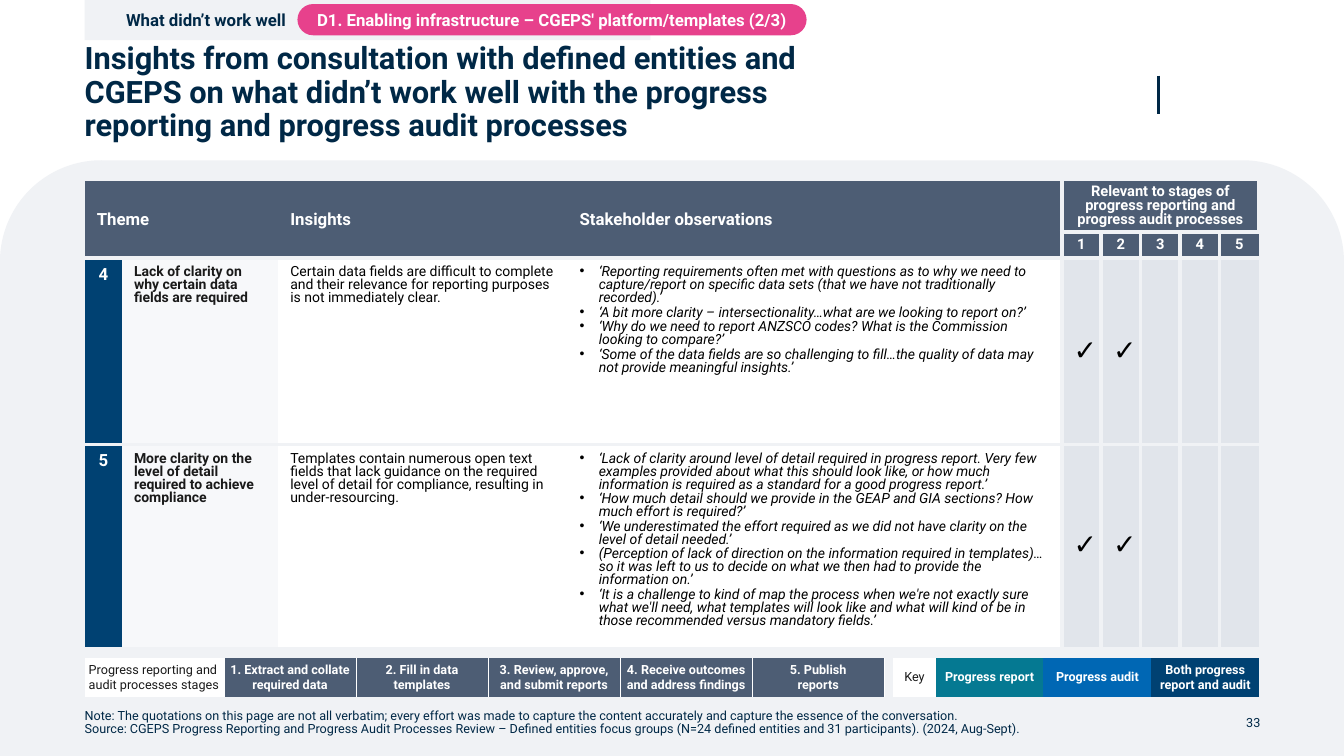
from lxml import etree
from pptx import Presentation, util as u
from pptx.dml.color import RGBColor
from pptx.enum import shapes, text
from pptx.oxml.ns import qn

THEME = dict(
    font="Roboto", navy="002846", white="FFFFFF", ink="1A1A1A", black="000000",
    panel="F0F2F5", slate="4D5D74", blue="004172", mid_blue="0067B4", teal="057992",
    pink="E7418C", theme_cell="F7F8FA", stage_cell="E1E5EB",
    title=22, tick=20, heading=12, stage=10.5, body=10, small=9,
)
CENTER, RIGHT = text.PP_ALIGN.CENTER, text.PP_ALIGN.RIGHT
MIDDLE, TOP = text.MSO_ANCHOR.MIDDLE, text.MSO_ANCHOR.TOP


def write(frame, lines, size, color, bold=False, italic=False, bullet=False, **layout):
    for number, line in enumerate(lines):
        paragraph = frame.paragraphs[0] if number == 0 else frame.add_paragraph()
        paragraph.text = line
        if bullet:
            properties = paragraph._p.get_or_add_pPr()
            properties.set("marL", str(u.Inches(0.19)))
            properties.set("indent", str(-u.Inches(0.19)))
            etree.SubElement(properties, qn("a:buFont"), typeface="Arial")
            etree.SubElement(properties, qn("a:buChar"), char="•")
            if number:
                paragraph.space_before = u.Pt(1)
        for name, value in layout.items():
            setattr(paragraph, name, value)
        for run in paragraph.runs:
            font = dict(name=THEME["font"], size=u.Pt(THEME[size]), bold=bold, italic=italic)
            for name, value in font.items():
                setattr(run.font, name, value)
            run.font.color.rgb = RGBColor.from_string(THEME[color])


def style_cell(cell, fill, margins, anchor, edges="", edge_color="panel", edge_width=3):
    across, down = margins
    places = dict(margin_left=u.Inches(across), margin_right=u.Inches(across),
                  margin_top=u.Inches(down), margin_bottom=u.Inches(down), vertical_anchor=anchor)
    for name, value in places.items():
        setattr(cell, name, value)
    properties = cell._tc.get_or_add_tcPr()
    for side in "LRTB":
        edge = etree.SubElement(properties, qn(f"a:ln{side}"))
        if side in edges:
            edge.set("w", str(u.Pt(edge_width)))
            solid = etree.SubElement(edge, qn("a:solidFill"))
            etree.SubElement(solid, qn("a:srgbClr"), val=THEME[edge_color])
        else:
            edge.set("w", "0")
            etree.SubElement(edge, qn("a:noFill"))
    cell.fill.solid()
    cell.fill.fore_color.rgb = RGBColor.from_string(THEME[fill])


deck = Presentation()
deck.slide_width, deck.slide_height = u.Inches(13.33), u.Inches(7.5)
slide = deck.slides.add_slide(deck.slide_layouts[6])

preset = shapes.MSO_SHAPE
blocks = [
    (preset.ROUND_2_SAME_RECTANGLE, (0, 1.59, 13.33, 5.91), "panel", 0.17, 0.1, None),
    (preset.RECTANGLE, (0.84, 0, 5.61, 0.4), "panel", None, 0.41,
     dict(lines=["What didn’t work well"], color="navy", alignment=text.PP_ALIGN.LEFT)),
    (preset.ROUNDED_RECTANGLE, (2.95, 0.04, 5.05, 0.31), "pink", 0.5, 0.1,
     dict(lines=["D1. Enabling infrastructure – CGEPS' platform/templates (2/3)"],
          color="white", alignment=CENTER)),
]
for kind, box, fill, rounding, left_margin, label in blocks:
    block = slide.shapes.add_shape(kind, *map(u.Inches, box))
    block.shadow.inherit = False
    block.fill.solid()
    block.fill.fore_color.rgb = RGBColor.from_string(THEME[fill])
    block.line.fill.background()
    if rounding:
        block.adjustments[0] = rounding
    if label:
        block.text_frame.margin_left = u.Inches(left_margin)
        block.text_frame.vertical_anchor = MIDDLE
        block.text_frame.word_wrap = True
        write(block.text_frame, size="heading", bold=True, **label)

divider = slide.shapes.add_connector(
    shapes.MSO_CONNECTOR.STRAIGHT, *map(u.Inches, (11.49, 0.75, 11.49, 1.13)))
divider.line.color.rgb = RGBColor.from_string(THEME["navy"])
divider.line.width = u.Pt(1.5)
etree.SubElement(divider._element.spPr, qn("a:effectLst"))

captions = [
    ((0.84, 0.49, 7.87, 0.87), dict(
        lines=["Insights from consultation with defined entities and CGEPS on what didn’t work well "
               "with the progress reporting and progress audit processes"],
        size="title", color="navy", bold=True, line_spacing=0.9)),
    ((0.84, 7.03, 10.63, 0.28), dict(
        lines=["Note: The quotations on this page are not all verbatim; every effort was made to capture "
               "the content accurately and capture the essence of the conversation.\n"
               "Source: CGEPS Progress Reporting and Progress Audit Processes Review – Defined entities "
               "focus groups (N=24 defined entities and 31 participants). (2024, Aug-Sept)."],
        size="small", color="navy", line_spacing=0.9)),
    ((11.71, 7.03, 0.79, 0.28), dict(lines=["33"], size="small", color="navy", alignment=RIGHT)),
]
for box, content in captions:
    frame = slide.shapes.add_textbox(*map(u.Inches, box)).text_frame
    places = dict(margin_left=0, margin_right=0, margin_top=0, margin_bottom=0,
                  vertical_anchor=MIDDLE, word_wrap=True)
    for name, value in places.items():
        setattr(frame, name, value)
    write(frame, **content)

findings = [
    ("4", "Lack of clarity on why certain data fields are required",
     "Certain data fields are difficult to complete and their relevance for reporting purposes is not "
     "immediately clear.",
     ["‘Reporting requirements often met with questions as to why we need to capture/report on specific "
      "data sets (that we have not traditionally recorded).’",
      "‘A bit more clarity – intersectionality…what are we looking to report on?’",
      "‘Why do we need to report ANZSCO codes? What is the Commission looking to compare?’",
      "‘Some of the data fields are so challenging to fill…the quality of data may not provide "
      "meaningful insights.’"], (1, 2)),
    ("5", "More clarity on the level of detail required to achieve compliance",
     "Templates contain numerous open text fields that lack guidance on the required level of detail for "
     "compliance, resulting in under-resourcing.",
     ["‘Lack of clarity around level of detail required in progress report. Very few examples provided "
      "about what this should look like, or how much information is required as a standard for a good "
      "progress report.’",
      "‘How much detail should we provide in the GEAP and GIA sections? How much effort is required?’",
      "‘We underestimated the effort required as we did not have clarity on the level of detail needed.’",
      "(Perception of lack of direction on the information required in templates)…so it was left to us to "
      "decide on what we then had to provide the information on.’",
      "‘It is a challenge to kind of map the process when we're not exactly sure what we'll need, what "
      "templates will look like and what will kind of be in those recommended versus mandatory fields.’"],
     (1, 2)),
]
text_widths = [0.37, 1.55, 2.87, 4.9]
stage_count = 5
stage_width = (11.65 - sum(text_widths)) / stage_count
row_heights = [0.5, 0.24, 1.85, 2.01]
first_stage = len(text_widths)
last_column = first_stage + stage_count - 1

insights = slide.shapes.add_table(
    len(row_heights), last_column + 1, *map(u.Inches, (0.84, 1.8, 11.65, sum(row_heights)))).table
insights.first_row = insights.horz_banding = False
for column, width in zip(insights.columns, text_widths + [stage_width] * stage_count):
    column.width = u.Inches(width)
for row, height in zip(insights.rows, row_heights):
    row.height = u.Inches(height)

body_fills = ["blue", "theme_cell", "white", "white"] + ["stage_cell"] * stage_count
for r in range(len(row_heights)):
    for c in range(last_column + 1):
        is_stage = c >= first_stage
        edges = "L" if is_stage else ""
        edges += "R" if first_stage - 1 <= c < last_column else ""
        edges += "T" if r > 1 or (r == 1 and is_stage) else ""
        edges += "B" if r < len(row_heights) - 1 else ""
        style_cell(insights.cell(r, c), body_fills[c] if r > 1 else "slate",
                   (0.12, 0.08 if r > 1 else 0.04), MIDDLE if r < 2 or is_stage else TOP, edges)

for c, span, heading in [(0, 2, "Theme"), (2, 1, "Insights"), (3, 1, "Stakeholder observations")]:
    insights.cell(0, c).merge(insights.cell(1, c + span - 1))
    write(insights.cell(0, c).text_frame, [heading], "heading", "white", True, line_spacing=0.9)
insights.cell(0, first_stage).merge(insights.cell(0, last_column))
write(insights.cell(0, first_stage).text_frame,
      ["Relevant to stages of progress reporting and progress audit processes"],
      "stage", "white", True, alignment=CENTER, line_spacing=u.Pt(10))
for stage in range(1, stage_count + 1):
    write(insights.cell(1, first_stage + stage - 1).text_frame, [str(stage)],
          "stage", "white", True, alignment=CENTER, line_spacing=0.9)

for r, (number, theme, insight, observations, stages) in enumerate(findings, 2):
    frames = [insights.cell(r, c).text_frame for c in range(last_column + 1)]
    write(frames[0], [number], "heading", "white", True, alignment=CENTER, line_spacing=0.9)
    write(frames[1], [theme], "body", "ink", True, line_spacing=0.8)
    write(frames[2], [insight], "body", "black", line_spacing=0.8)
    write(frames[3], observations, "body", "black", italic=True, bullet=True, line_spacing=0.8)
    for stage in stages:
        write(frames[first_stage + stage - 1], ["✓"], "tick", "black", italic=True,
              alignment=CENTER, line_spacing=0.9)

legends = [
    (8.86, [0.42] + [1.07] * 3, "", None,
     [("white", ["Key"]), ("teal", ["Progress report"]), ("mid_blue", ["Progress audit"]),
      ("blue", ["Both progress report and audit"])]),
    (0.84, [1.38] + [1.31] * stage_count, "LR", text.PP_ALIGN.LEFT,
     [("white", ["Progress reporting and audit processes stages"]),
      ("slate", ["1. Extract and collate required data"]),
      ("slate", ["2. Fill in data", "templates"]),
      ("slate", ["3. Review, approve, and submit reports"]),
      ("slate", ["4. Receive outcomes and address findings"]),
      ("slate", ["5. Publish\nreports"])]),
]
for left, widths, edges, label_alignment, entries in legends:
    legend = slide.shapes.add_table(
        1, len(widths), *map(u.Inches, (left, 6.53, sum(widths), 0.38))).table
    legend.first_row = legend.horz_banding = False
    for c, (width, (fill, lines)) in enumerate(zip(widths, entries)):
        legend.columns[c].width = u.Inches(width)
        style_cell(legend.cell(0, c), fill, (0.04, 0.04), MIDDLE, edges if c else "", "white", 0.5)
        write(legend.cell(0, c).text_frame, lines, "small", "white" if c else "ink", bold=c > 0,
              alignment=CENTER if c or label_alignment is None else label_alignment)

deck.save("out.pptx")
